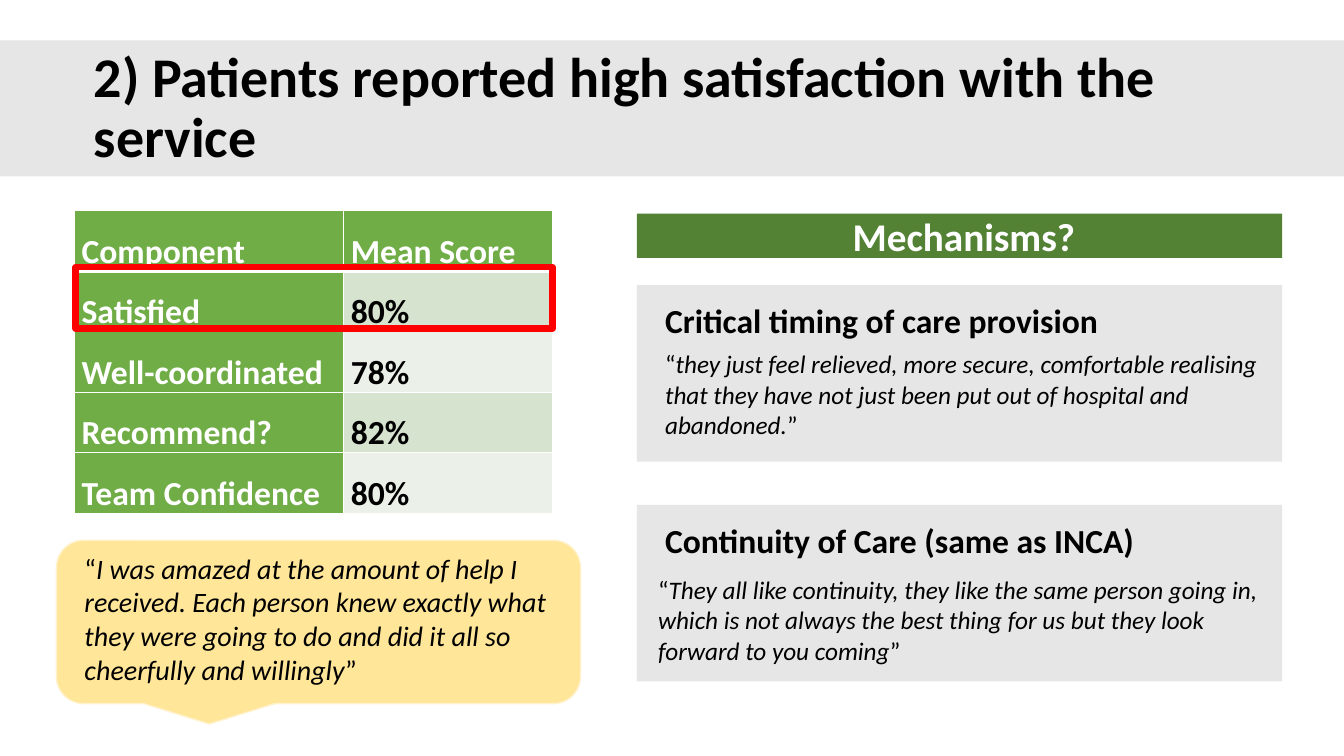
"""Build the patient satisfaction slide."""
from lxml.etree import SubElement
from pptx import Presentation
from pptx.dml.color import RGBColor
from pptx.enum.shapes import MSO_SHAPE
from pptx.enum.text import MSO_ANCHOR, PP_ALIGN
from pptx.oxml import parse_xml
from pptx.oxml.ns import nsdecls, qn
from pptx.util import Inches, Pt

TITLE = "2) Patients reported high satisfaction with the service"
ROWS = [
    ("Component", "Mean Score"),
    ("Satisfied", "80%"),
    ("Well-coordinated", "78%"),
    ("Recommend?", "82%"),
    ("Team Confidence", "80%"),
]
PRAISE = ("I was amazed at the amount of help I received. Each person knew exactly "
          "what they were going to do and did it all so cheerfully and willingly")
PANELS = [
    {"top": 37.73, "head": "Critical timing of care provision",
     "quote": "they just feel relieved, more secure, comfortable realising that they "
              "have not just been put out of hospital and abandoned.",
     "place": (48.75, 7.73, 46.65)},
    {"top": 66.8, "head": "Continuity of Care (same as INCA)",
     "quote": "They all like continuity, they like the same person going in, which is "
              "not always the best thing for us but they look forward to you coming",
     "place": (48.23, 8.53, 47.7)},
]
COLORS = {"black": "000000", "white": "FFFFFF", "grey": "E7E6E6", "forest": "548235",
          "green": "70AD47", "sage": "D5E3CF", "mist": "EBF1E9", "red": "FF0000",
          "sand": "FFE699", "cream": "FFF2CC"}
FONT = "Calibri"
COLS = (20.03, 15.52)

deck = Presentation()
deck.slide_width, deck.slide_height = Inches(13.333), Inches(7.5)
slide = deck.slides.add_slide(deck.slide_layouts[5])
shapes = slide.shapes


def rgb(name):
    return RGBColor.from_string(COLORS[name])


def place(x, y, w, h):
    """Turn percentages of the slide into lengths."""
    wide, high = deck.slide_width / 100, deck.slide_height / 100
    return int(x * wide), int(y * high), int(w * wide), int(h * high)


def style(run, size, color="black", bold=False, italic=False):
    font = run.font
    font.name, font.size, font.bold, font.italic = FONT, Pt(size), bold, italic
    font.color.rgb = rgb(color)


def block(area, fill=None, line=None, width=1, kind=MSO_SHAPE.RECTANGLE):
    shape = shapes.add_shape(kind, *place(*area))
    shape.shadow.inherit = False
    if fill:
        shape.fill.solid()
        shape.fill.fore_color.rgb = rgb(fill)
    else:
        shape.fill.background()
    if line:
        shape.line.color.rgb = rgb(line)
        shape.line.width = Pt(width)
    else:
        shape.line.fill.background()


def label(area, text, size, color="black"):
    frame = shapes.add_textbox(*place(*area)).text_frame
    frame.word_wrap = True
    frame.text = text
    style(frame.paragraphs[0].runs[0], size, color, bold=True)


def quote(area, text, size):
    frame = shapes.add_textbox(*place(*area)).text_frame
    frame.word_wrap = True
    for part in ("“", text, "”"):
        run = frame.paragraphs[0].add_run()
        run.text = part
        style(run, size, italic=part == text)


def border(cell, row):
    props = cell._tc.get_or_add_tcPr()
    widths = {"L": 1, "R": 1, "T": 3 if row == 1 else 1, "B": 3 if row == 0 else 1}
    for spot, (side, width) in enumerate(widths.items()):
        line = parse_xml(f'<a:ln{side} {nsdecls("a")} w="{Pt(width)}"/>')
        fill = SubElement(line, qn("a:solidFill"))
        SubElement(fill, qn("a:srgbClr"), val=COLORS["white"])
        props.insert(spot, line)


def scores(area):
    table = shapes.add_table(len(ROWS), len(COLS), *place(*area)).table
    for col, share in zip(table.columns, COLS):
        col.width = place(0, 0, share, 0)[2]
    for r, row in enumerate(ROWS):
        for c, text in enumerate(row):
            cell = table.cell(r, c)
            dark = r == 0 or c == 0
            cell.fill.solid()
            cell.fill.fore_color.rgb = rgb("green" if dark else "sage" if r % 2 else "mist")
            cell.margin_left = cell.margin_right = Inches(0.07)
            cell.margin_top = cell.margin_bottom = 0
            cell.text_frame.text = text
            para = cell.text_frame.paragraphs[0]
            para.alignment, para.line_spacing = PP_ALIGN.JUSTIFY, 1.5
            style(para.runs[0], 24, "white" if dark else "black", bold=True)
            border(cell, r)


def heading(area):
    title = shapes.title
    title.left, title.top, title.width, title.height = place(*area)
    frame = title.text_frame
    frame.text = TITLE
    frame.word_wrap = True
    frame.vertical_anchor = MSO_ANCHOR.MIDDLE
    para = frame.paragraphs[0]
    para.alignment, para.line_spacing = PP_ALIGN.LEFT, 0.9
    style(para.runs[0], 40, bold=True)
    shapes.element.append(title.element)


def main():
    block((0, 5.33, 100, 18), "grey")
    heading((6.23, 4.8, 91.05, 19.33))
    block((47.4, 28.27, 48, 5.87), "forest")
    label((62.7, 27.47, 19.35, 7.6), "Mechanisms?", 28, "white")
    for panel in PANELS:
        top = panel["top"]
        x, drop, wide = panel["place"]
        block((47.4, top, 48, 23.33), "grey")
        label((48.75, top + 1.33, 41.6, 6.67), panel["head"], 24)
        quote((x, top + drop, wide, 13.47), panel["quote"], 18)
    scores((5.55, 27.87, sum(COLS), 40))
    block((5.63, 35.33, 35.48, 8.13), line="red", width=4.5)
    block((4.2, 71.47, 39, 21.6), "sand", "cream", kind=MSO_SHAPE.ROUNDED_RECTANGULAR_CALLOUT)
    quote((5.55, 72.27, 36.23, 19.33), PRAISE, 20)
    deck.save("out.pptx")


if __name__ == "__main__":
    main()
